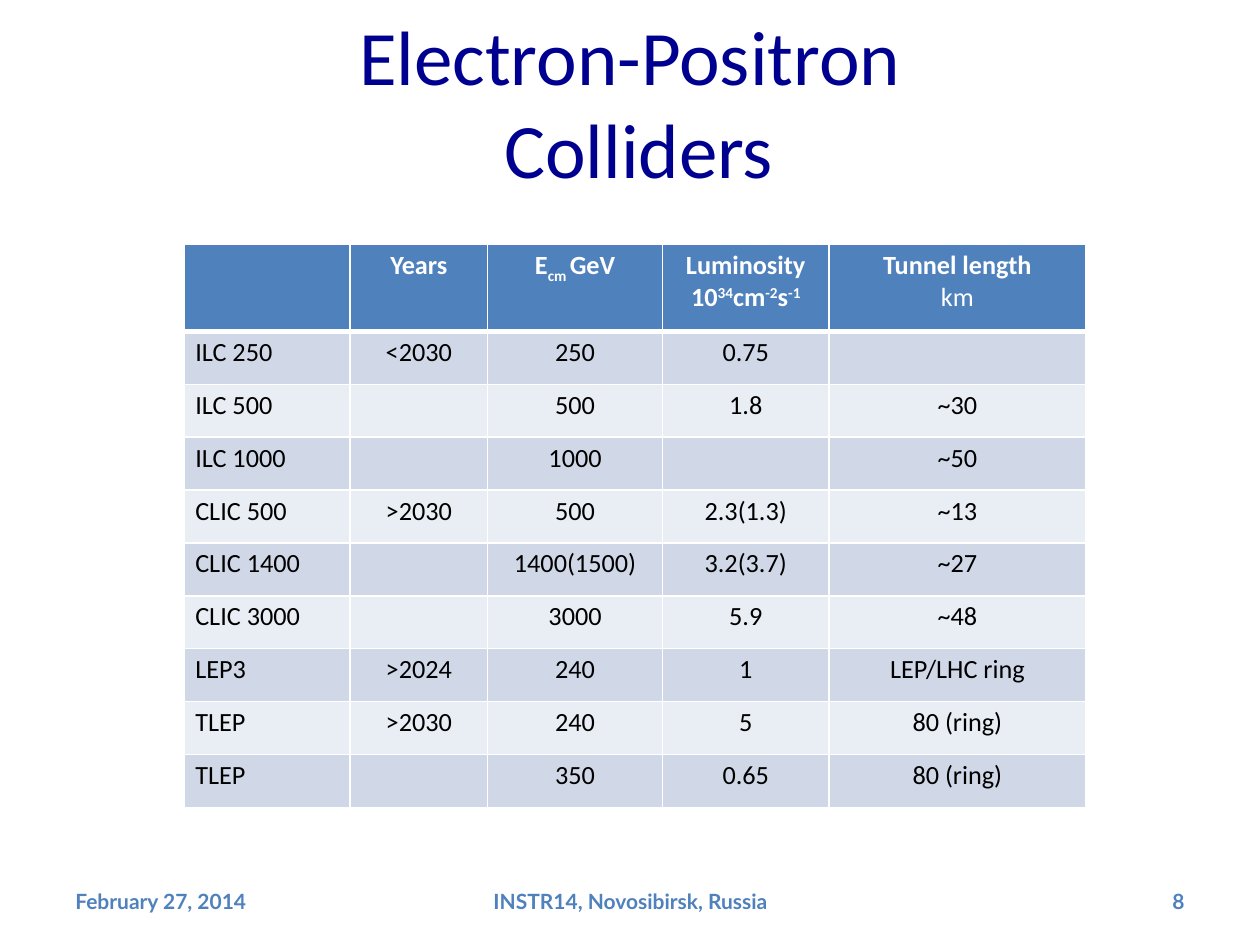
"""Build the slide comparing electron-positron colliders."""
from typing import NamedTuple

from lxml import etree
from pptx import Presentation
from pptx.dml.color import RGBColor
from pptx.enum import text
from pptx.oxml import ns
from pptx.util import Inches, Pt

NAVY, BLUE, WHITE, BLACK = "000090", "4F81BD", "FFFFFF", "000000"
BANDS = ("D0D8E8", "E9EDF4")
LEFT, CENTER, RIGHT = text.PP_ALIGN.LEFT, text.PP_ALIGN.CENTER, text.PP_ALIGN.RIGHT


class Span(NamedTuple):
    words: str
    baseline: int = 0
    bold: bool = True


class Footer(NamedTuple):
    words: str
    left: float
    width: float
    align: text.PP_ALIGN


FOOTERS = (
    Footer("February 27, 2014", 0.5, 2.33, LEFT),
    Footer("INSTR14, Novosibirsk, Russia", 3.42, 3.17, CENTER),
    Footer("8", 7.17, 2.33, RIGHT),
)
COLUMN_WIDTHS = (1.32, 1.09, 1.39, 1.32, 2.04)
HEADER_HEIGHT, ROW_HEIGHT = 0.69, 0.42
HEADERS = (
    (),
    ((Span("Years"),),),
    ((Span("E"), Span("cm ", -25), Span("GeV")),),
    ((Span("Luminosity"),),
     (Span("10"), Span("34", 30), Span("cm"), Span("-2", 30), Span("s"), Span("-1", 30))),
    ((Span("Tunnel length"),), (Span("km", bold=False),)),
)
COLLIDERS = (
    ("ILC 250", "<2030", "250", "0.75", ""),
    ("ILC 500", "", "500", "1.8", "~30"),
    ("ILC 1000", "", "1000", "", "~50"),
    ("CLIC 500", ">2030", "500", "2.3(1.3)", "~13"),
    ("CLIC 1400", "", "1400(1500)", "3.2(3.7)", "~27"),
    ("CLIC 3000", "", "3000", "5.9", "~48"),
    ("LEP3", ">2024", "240", "1", "LEP/LHC ring"),
    ("TLEP", ">2030", "240", "5", "80 (ring)"),
    ("TLEP", "", "350", "0.65", "80 (ring)"),
)


def color(value: str) -> RGBColor:
    """Turn a hex string into a colour."""
    return RGBColor.from_string(value)


def add_span(para, span: Span, size: float, font: str, ink: str) -> None:
    """Add one formatted run to a paragraph."""
    run = para.add_run()
    run.text = span.words
    run.font.size, run.font.name, run.font.bold = Pt(size), font, span.bold
    run.font.color.rgb = color(ink)
    if span.baseline:
        run.font._element.set("baseline", str(span.baseline * 1000))


def add_title(page) -> None:
    """Place the title and write its two lines."""
    title = page.shapes.title
    title.left, title.top = Inches(0.57), Inches(0.02)
    title.width, title.height = Inches(9), Inches(1.25)
    frame = title.text_frame
    frame.word_wrap, frame.vertical_anchor = True, text.MSO_ANCHOR.TOP
    frame.auto_size = text.MSO_AUTO_SIZE.NONE
    para = frame.paragraphs[0]
    para.alignment = CENTER
    add_span(para, Span("Electron-Positron ", bold=False), 44, "Calibri", NAVY)
    para.add_line_break()
    add_span(para, Span("Colliders", bold=False), 44, "Calibri", NAVY)


def add_footer(page, footer: Footer) -> None:
    """Add one footer text box."""
    box = page.shapes.add_textbox(Inches(footer.left), Inches(6.95),
                                  Inches(footer.width), Inches(0.4))
    frame = box.text_frame
    frame.word_wrap, frame.vertical_anchor = True, text.MSO_ANCHOR.MIDDLE
    para = frame.paragraphs[0]
    para.alignment = footer.align
    add_span(para, Span(footer.words), 12, "Lato", BLUE)


def set_borders(cell, top: float, bottom: float) -> None:
    """Draw white borders around a cell."""
    properties = cell._tc.get_or_add_tcPr()
    widths = {"lnL": 1, "lnR": 1, "lnT": top, "lnB": bottom}
    for index, (side, width) in enumerate(widths.items()):
        line = etree.Element(ns.qn(f"a:{side}"), w=str(Pt(width)))
        fill = etree.SubElement(line, ns.qn("a:solidFill"))
        etree.SubElement(fill, ns.qn("a:srgbClr"), val=WHITE)
        properties.insert(index, line)


def fill_cell(cell, lines, align: text.PP_ALIGN, ink: str, fill: str) -> None:
    """Fill a cell and write its paragraphs."""
    cell.fill.solid()
    cell.fill.fore_color.rgb = color(fill)
    cell.margin_left = cell.margin_right = Inches(0.09)
    cell.margin_top = cell.margin_bottom = Inches(0.04)
    for index, spans in enumerate(lines):
        frame = cell.text_frame
        para = frame.add_paragraph() if index else frame.paragraphs[0]
        para.alignment = align
        for span in spans:
            add_span(para, span, 15, "Calibri", ink)


def add_collider_table(page) -> None:
    """Add the table of collider parameters."""
    height = HEADER_HEIGHT + ROW_HEIGHT * len(COLLIDERS)
    table = page.shapes.add_table(
        len(COLLIDERS) + 1, len(COLUMN_WIDTHS), Inches(1.46), Inches(1.94),
        Inches(sum(COLUMN_WIDTHS)), Inches(height)).table
    for column, width in zip(table.columns, COLUMN_WIDTHS):
        column.width = Inches(width)
    for index, row in enumerate(table.rows):
        row.height = Inches(ROW_HEIGHT if index else HEADER_HEIGHT)
    for column, lines in enumerate(HEADERS):
        cell = table.cell(0, column)
        fill_cell(cell, lines, CENTER, WHITE, BLUE)
        set_borders(cell, 1, 3)
    for row, values in enumerate(COLLIDERS, 1):
        for column, value in enumerate(values):
            cell = table.cell(row, column)
            lines = ((Span(value, bold=False),),) if value else ()
            fill_cell(cell, lines, CENTER if column else LEFT, BLACK, BANDS[(row - 1) % 2])
            set_borders(cell, 3 if row == 1 else 1, 1)


def main() -> None:
    """Build and save the deck."""
    deck = Presentation()
    deck.slide_width, deck.slide_height = Inches(10), Inches(7.5)
    page = deck.slides.add_slide(deck.slide_layouts[5])
    add_title(page)
    for footer in FOOTERS:
        add_footer(page, footer)
    add_collider_table(page)
    deck.save("out.pptx")


if __name__ == "__main__":
    main()
